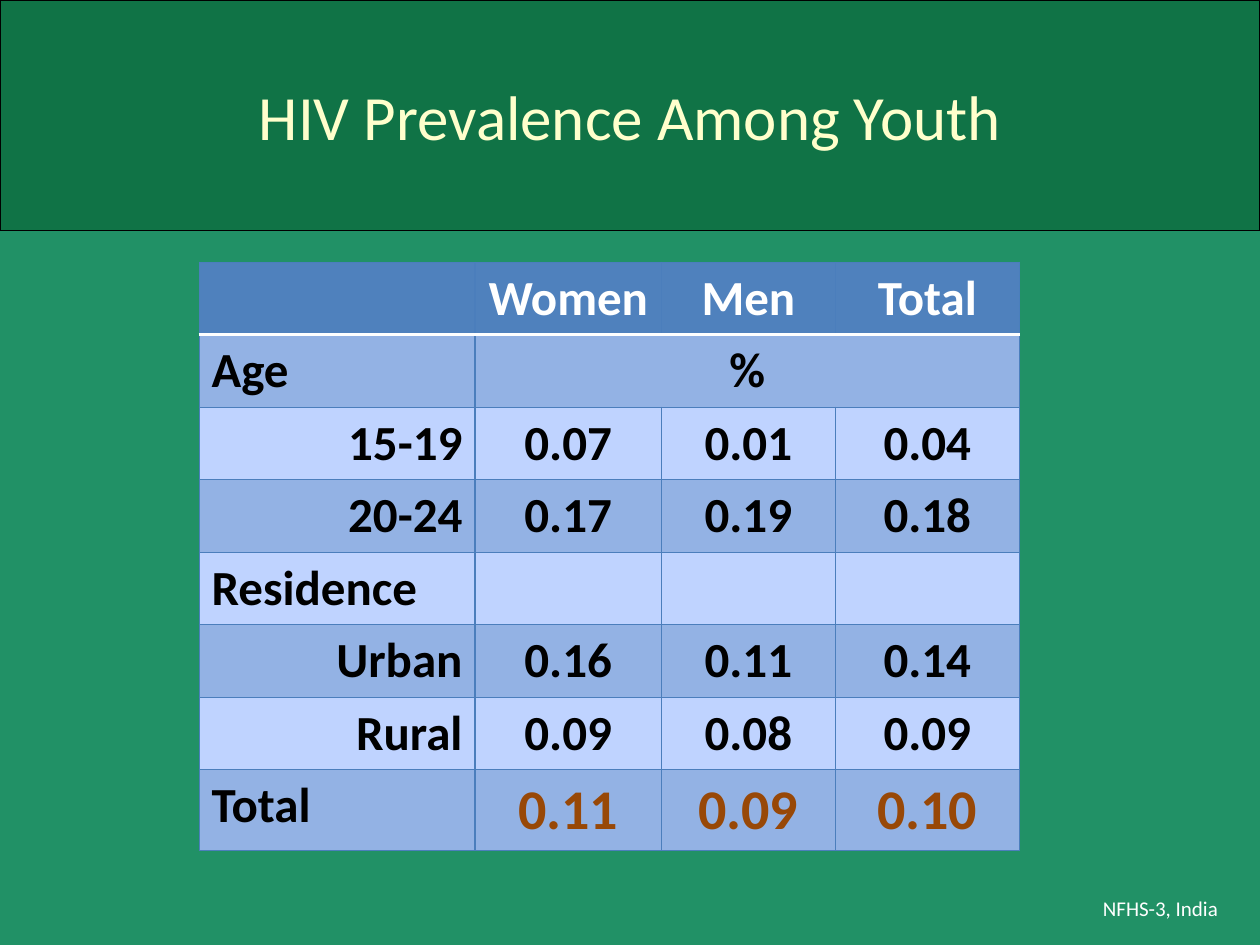
from lxml.etree import SubElement
from pptx import Presentation
from pptx.dml.color import RGBColor
from pptx.enum.shapes import MSO_SHAPE
from pptx.enum.text import MSO_ANCHOR, PP_ALIGN
from pptx.oxml import parse_xml
from pptx.oxml.ns import nsdecls, qn
from pptx.util import Inches, Pt

GREEN = RGBColor(0x21, 0x91, 0x66)
DEEP = RGBColor(0x00, 0x58, 0x28)
CREAM = RGBColor(0xFF, 0xFF, 0xCC)
WHITE = RGBColor(0xFF, 0xFF, 0xFF)
BLACK = RGBColor(0x00, 0x00, 0x00)
BLUE = RGBColor(0x4F, 0x81, 0xBD)
EDGE = RGBColor(0x4B, 0x7E, 0xBC)
DARK = RGBColor(0x93, 0xB2, 0xE4)
LIGHT = RGBColor(0xBF, 0xD3, 0xFF)
BROWN = RGBColor(0x98, 0x48, 0x07)

WIDTHS = [2.19, 1.48, 1.38, 1.46]
ROW = 0.51
ROWS = [
    ["", "Women", "Men", "Total"],
    ["Age", "%", "", ""],
    ["15-19", "0.07", "0.01", "0.04"],
    ["20-24", "0.17", "0.19", "0.18"],
    ["Residence", "", "", ""],
    ["Urban", "0.16", "0.11", "0.14"],
    ["Rural", "0.09", "0.08", "0.09"],
    ["Total", "0.11", "0.09", "0.10"],
]
GROUPS = ("Age", "Residence", "Total")


def place(shape, left, top, width, height):
    shape.left, shape.top = Inches(left), Inches(top)
    shape.width, shape.height = Inches(width), Inches(height)


def write(frame, text, size, color, align, bold=False):
    frame.text = text
    para = frame.paragraphs[0]
    para.alignment = align
    for run in para.runs:
        run.font.name = "Calibri"
        run.font.size = Pt(size)
        run.font.bold = bold
        run.font.color.rgb = color


def add_title(slide):
    title = slide.shapes.title
    place(title, 0, 0, 10, 1.83)
    title.fill.solid()
    title.fill.fore_color.rgb = DEEP
    tint = title.fill._xPr.find(qn("a:solidFill"))[0]
    SubElement(tint, qn("a:alpha")).set("val", "51000")
    title.line.color.rgb = BLACK
    title.line.width = Pt(1)
    title.text_frame.vertical_anchor = MSO_ANCHOR.MIDDLE
    write(title.text_frame, "HIV Prevalence Among Youth", 36, CREAM, PP_ALIGN.CENTER)


def add_source(slide):
    box = slide.shapes.add_shape(
        MSO_SHAPE.RECTANGLE, Inches(8.42), Inches(6.92), Inches(1.58), Inches(0.58))
    box.shadow.inherit = False
    box.fill.solid()
    box.fill.fore_color.rgb = GREEN
    box.line.fill.background()
    box.text_frame.vertical_anchor = MSO_ANCHOR.MIDDLE
    write(box.text_frame, "NFHS-3, India", 12, WHITE, PP_ALIGN.CENTER)


def add_edges(cell, row):
    heavy = {0: "lnB", 1: "lnT"}.get(row)
    props = cell._tc.get_or_add_tcPr()
    for spot, side in enumerate(("lnL", "lnR", "lnT", "lnB")):
        color, width = (WHITE, Pt(2)) if side == heavy else (EDGE, Pt(0.75))
        props.insert(spot, parse_xml(
            f'<a:{side} {nsdecls("a")} w="{int(width)}"><a:solidFill>'
            f'<a:srgbClr val="{color}"/></a:solidFill></a:{side}>'))


def fill_cell(cell, text, row, col):
    size, color, align = 28, BLACK, PP_ALIGN.CENTER
    if row == 0:
        color = WHITE
    elif col == 0:
        align = PP_ALIGN.LEFT if text in GROUPS else PP_ALIGN.RIGHT
    elif row == len(ROWS) - 1:
        size, color = 32, BROWN
    write(cell.text_frame, text, size, color, align, True)
    cell.fill.solid()
    cell.fill.fore_color.rgb = BLUE if row == 0 else DARK if row % 2 else LIGHT
    add_edges(cell, row)


def add_grid(slide):
    table = slide.shapes.add_table(
        len(ROWS), len(WIDTHS), Inches(1.58), Inches(2.08),
        Inches(sum(WIDTHS)), Inches(ROW * len(ROWS))).table
    for col, width in zip(table.columns, WIDTHS):
        col.width = Inches(width)
    for row, texts in enumerate(ROWS):
        table.rows[row].height = Inches(ROW)
        for col, text in enumerate(texts):
            fill_cell(table.cell(row, col), text, row, col)
    table.cell(1, 1).merge(table.cell(1, 3))


def main():
    deck = Presentation()
    deck.slide_width, deck.slide_height = Inches(10), Inches(7.5)
    slide = deck.slides.add_slide(deck.slide_layouts[5])
    slide.background.fill.solid()
    slide.background.fill.fore_color.rgb = GREEN
    add_title(slide)
    add_source(slide)
    add_grid(slide)
    deck.save("out.pptx")


if __name__ == "__main__":
    main()
